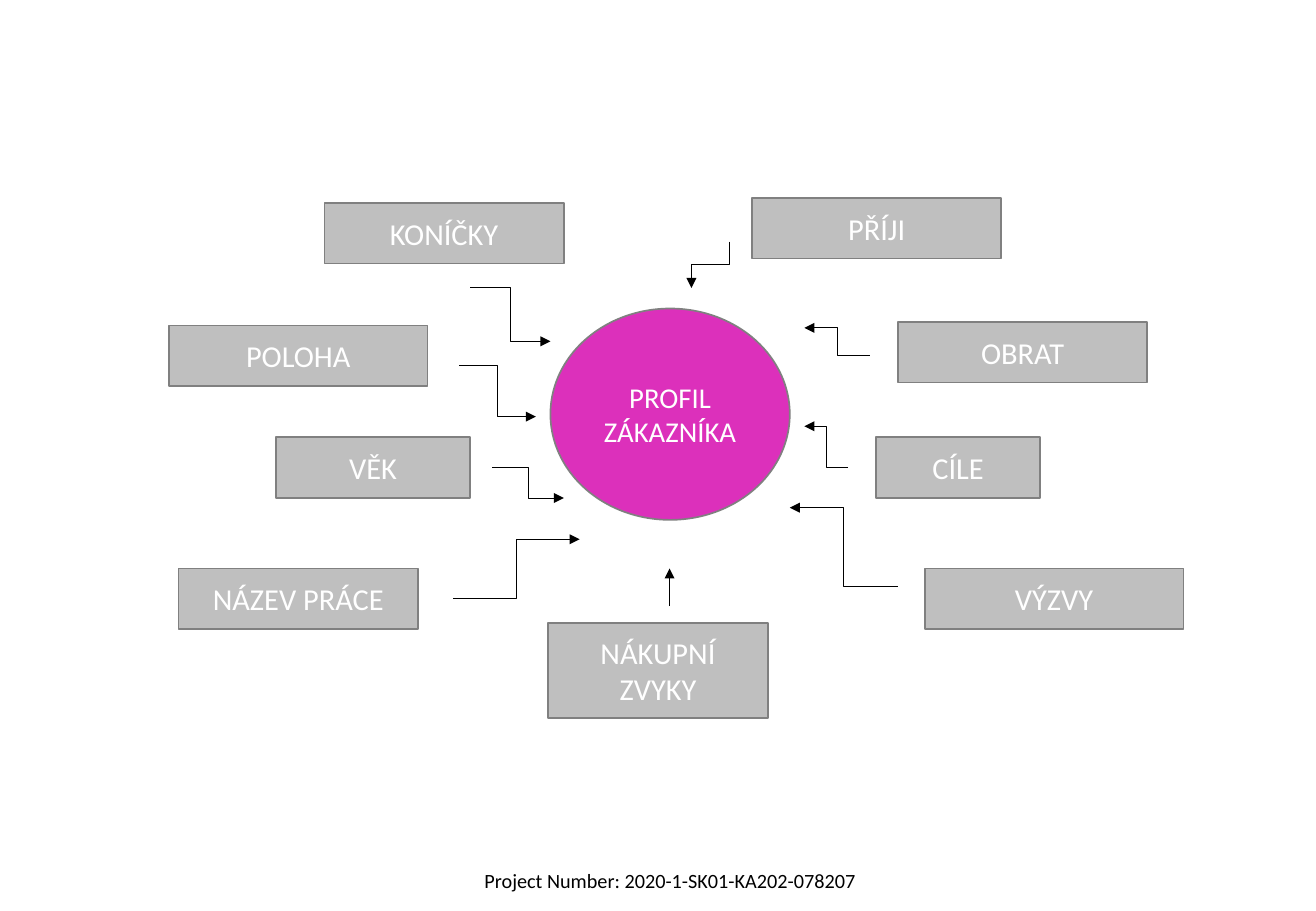
from dataclasses import dataclass

from lxml.etree import SubElement
from pptx import Presentation
from pptx.dml.color import RGBColor
from pptx.enum.shapes import MSO_CONNECTOR, MSO_SHAPE
from pptx.enum.text import MSO_ANCHOR, PP_ALIGN
from pptx.oxml.ns import qn
from pptx.util import Pt

# Content: all lengths in px, 100 px to the inch
SLIDE_SIZE = (1083, 750)
FOOTER = ("Project Number: 2020-1-SK01-KA202-078207", (374, 710, 355, 30))
CENTRE = ("PROFIL ZÁKAZNÍKA", (453, 254, 197, 174))
TOPICS = [
    ("VĚK", (227, 360, 160, 50)),
    ("PŘÍJI", (619, 163, 205, 50)),
    ("OBRAT", (739, 265, 205, 50)),
    ("CÍLE", (721, 360, 135, 50)),
    ("VÝZVY", (761, 468, 213, 50)),
    ("NÁKUPNÍ ZVYKY", (451, 513, 181, 78)),
    ("POLOHA", (139, 268, 213, 50)),
    ("KONÍČKY", (267, 167, 197, 50)),
    ("NÁZEV PRÁCE", (147, 468, 197, 50)),
]
# Arrows that leave sideways: start, end
SIDE_ARROWS = [
    ((387, 237), (453, 281)),
    ((378, 301), (441, 343)),
    ((405, 385), (464, 410)),
    ((373, 493), (477, 444)),
    ((739, 483), (650, 418)),
    ((698, 385), (662, 351)),
    ((716, 293), (662, 270)),
]
STRAIGHT_ARROW = ((551, 499), (551, 468))
DOWN_ARROW = ((600, 199), (569, 237))


@dataclass(frozen=True)
class Theme:
    font: str = "Calibri"
    accent: str = "DC30BB"
    box: str = "BFBFBF"
    outline: str = "808080"
    light: str = "FFFFFF"
    dark: str = "000000"
    centre_size: int = 17
    topic_size: int = 18
    footer_size: int = 12
    outline_width: float = 1
    arrow_width: float = 0.5


THEME = Theme()
EMU_PER_PX = 9144


def px(*values):
    return [round(value * EMU_PER_PX) for value in values]


def write_text(shape, text, *, size, color, wrap=True, anchor=MSO_ANCHOR.MIDDLE):
    frame = shape.text_frame
    frame.word_wrap = wrap
    frame.vertical_anchor = anchor
    paragraph = frame.paragraphs[0]
    paragraph.alignment = PP_ALIGN.CENTER
    run = paragraph.add_run()
    run.text = text
    run.font.name = THEME.font
    run.font.size = Pt(size)
    run.font.color.rgb = RGBColor.from_string(color)


def add_node(slide, preset, text, bounds, *, fill, size):
    shape = slide.shapes.add_shape(preset, *px(*bounds))
    shape.shadow.inherit = False
    shape.fill.solid()
    shape.fill.fore_color.rgb = RGBColor.from_string(fill)
    shape.line.color.rgb = RGBColor.from_string(THEME.outline)
    shape.line.width = Pt(THEME.outline_width)
    write_text(shape, text, size=size, color=THEME.light)


def add_arrow(slide, kind, start, end):
    connector = slide.shapes.add_connector(kind, *px(*start, *end))
    connector.line.color.rgb = RGBColor.from_string(THEME.dark)
    connector.line.width = Pt(THEME.arrow_width)
    SubElement(connector.line._get_or_add_ln(), qn("a:tailEnd"), type="triangle")
    SubElement(connector._element.spPr, qn("a:effectLst"))
    return connector


def add_down_arrow(slide, start, end):
    # A quarter turn about the midpoint makes the elbow leave downwards
    (x1, y1), (x2, y2) = start, end
    middle_x, middle_y = (x1 + x2) / 2, (y1 + y2) / 2
    half_x, half_y = abs(y2 - y1) / 2, abs(x2 - x1) / 2
    connector = add_arrow(
        slide,
        MSO_CONNECTOR.ELBOW,
        (middle_x - half_x, middle_y - half_y),
        (middle_x + half_x, middle_y + half_y),
    )
    connector._element.spPr.find(qn("a:xfrm")).set("rot", str(90 * 60000))


def main():
    presentation = Presentation()
    presentation.slide_width, presentation.slide_height = px(*SLIDE_SIZE)
    slide = presentation.slides.add_slide(presentation.slide_layouts[6])

    # Footer
    text, bounds = FOOTER
    footer = slide.shapes.add_textbox(*px(*bounds))
    write_text(footer, text, size=THEME.footer_size, color=THEME.dark,
               wrap=False, anchor=MSO_ANCHOR.TOP)

    # Customer profile and its topics
    add_node(slide, MSO_SHAPE.OVAL, *CENTRE, fill=THEME.accent, size=THEME.centre_size)
    for text, bounds in TOPICS:
        add_node(slide, MSO_SHAPE.RECTANGLE, text, bounds,
                 fill=THEME.box, size=THEME.topic_size)

    # Arrows towards the centre
    for start, end in SIDE_ARROWS:
        add_arrow(slide, MSO_CONNECTOR.ELBOW, start, end)
    add_arrow(slide, MSO_CONNECTOR.STRAIGHT, *STRAIGHT_ARROW)
    add_down_arrow(slide, *DOWN_ARROW)

    presentation.save("out.pptx")


if __name__ == "__main__":
    main()
